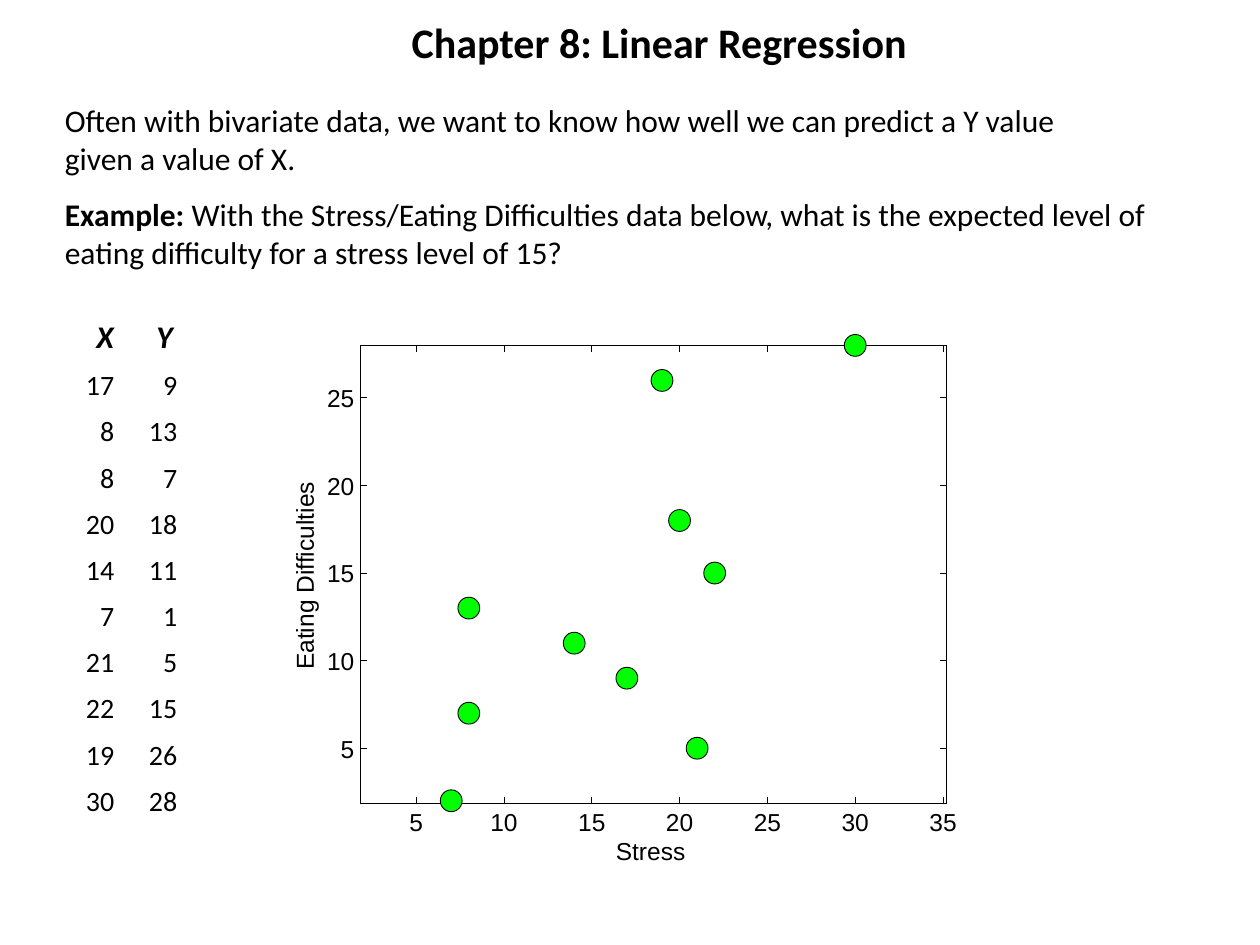
from dataclasses import dataclass

from lxml.etree import SubElement
from pptx import Presentation
from pptx.chart.data import XyChartData
from pptx.dml.color import RGBColor
from pptx.enum.chart import XL_CHART_TYPE, XL_MARKER_STYLE
from pptx.enum.shapes import MSO_CONNECTOR, MSO_SHAPE
from pptx.enum.text import MSO_ANCHOR, PP_ALIGN
from pptx.oxml import parse_xml
from pptx.oxml.ns import nsdecls, qn
from pptx.util import Inches, Pt

COLUMNS, ROWS = 120, 90
UNIT = Inches(10) / COLUMNS
NO_STYLE = "{2D5ABB26-0587-4C30-8999-92F81FD0307C}"

TABLE_DATA = [(17, 9), (8, 13), (8, 7), (20, 18), (14, 11),
              (7, 1), (21, 5), (22, 15), (19, 26), (30, 28)]
PLOTTED_DATA = [(7, 2) if pair == (7, 1) else pair for pair in TABLE_DATA]


@dataclass(frozen=True)
class Theme:
    ink: RGBColor = RGBColor(0, 0, 0)
    marker: RGBColor = RGBColor(0, 255, 0)
    text_font: str = "Calibri"
    plot_font: str = "Arial"
    title_size: int = 24
    body_size: int = 18
    table_size: int = 16
    plot_size: int = 14
    hairline: float = 0.5
    marker_size: int = 12


@dataclass(frozen=True)
class Box:
    left: float
    top: float
    width: float
    height: float

    @property
    def right(self):
        return self.left + self.width

    @property
    def bottom(self):
        return self.top + self.height

    def lengths(self):
        return [grid(value) for value in (self.left, self.top, self.width, self.height)]


@dataclass(frozen=True)
class Scale:
    low: float
    high: float
    ticks: range

    def share(self, value):
        return (value - self.low) / (self.high - self.low)


THEME = Theme()
X_SCALE = Scale(1.84, 35.2, range(5, 36, 5))
Y_SCALE = Scale(1.83, 28, range(5, 26, 5))


def grid(value):
    return round(value * UNIT)


def write(frame, *parts, size=THEME.body_size, font=THEME.text_font, bold=False,
          italic=False, align=PP_ALIGN.LEFT, anchor=MSO_ANCHOR.TOP, wrap=True,
          margins=None, tab=None):
    frame.word_wrap = wrap
    frame.vertical_anchor = anchor
    if margins is not None:
        frame.margin_left = frame.margin_right = margins
        frame.margin_top = frame.margin_bottom = margins
    paragraph = frame.paragraphs[0]
    paragraph.alignment = align
    if tab is not None:
        tabs = SubElement(paragraph._p.get_or_add_pPr(), qn("a:tabLst"))
        SubElement(tabs, qn("a:tab"), pos=str(grid(tab)), algn="l")
    for index, part in enumerate(parts):
        run = paragraph.add_run()
        run.text = part
        run.font.name = font
        run.font.size = Pt(size)
        run.font.bold = bold and index == 0
        run.font.italic = italic
        run.font.color.rgb = THEME.ink


def add_text(slide, box, *parts, **text_format):
    shape = slide.shapes.add_textbox(*box.lengths())
    write(shape.text_frame, *parts, **text_format)
    return shape


def add_plot_text(slide, box, text, **text_format):
    return add_text(slide, box, text, size=THEME.plot_size, font=THEME.plot_font,
                    wrap=False, margins=0, **text_format)


def add_line(slide, start_x, start_y, end_x, end_y):
    line = slide.shapes.add_connector(
        MSO_CONNECTOR.STRAIGHT, *map(grid, (start_x, start_y, end_x, end_y)))
    line.line.color.rgb = THEME.ink
    line.line.width = Pt(THEME.hairline)
    SubElement(line._element.spPr, qn("a:effectLst"))


def place_title(slide, box):
    title = slide.shapes.title
    title.left, title.top, title.width, title.height = box.lengths()
    write(title.text_frame, "Chapter 8: Linear Regression",
          size=THEME.title_size, bold=True, wrap=False)


def place_introduction(slide, box):
    half = box.height / 2
    add_text(slide, Box(box.left, box.top, 100, half),
             "Often with bivariate data, we want to know how well we can predict "
             "a Y value given a value of X.")
    add_text(slide, Box(box.left, box.top + half, box.width, half),
             "Example: ",
             "With the Stress/Eating Difficulties data below, what is the expected "
             "level of eating difficulty for a stress level of 15?", bold=True)


def place_data_table(slide, box):
    add_text(slide, Box(box.left + 3, box.top - 4.4, 10, 4.8), "X\tY",
             bold=True, italic=True, wrap=False, tab=5.7)
    table = slide.shapes.add_table(len(TABLE_DATA), 2, *box.lengths()).table
    table.first_row = table.horz_banding = False
    table._tbl.tblPr.find(qn("a:tableStyleId")).text = NO_STYLE
    for row, values in enumerate(TABLE_DATA):
        for column, value in enumerate(values):
            cell = table.cell(row, column)
            cell.fill.background()
            cell.vertical_anchor = MSO_ANCHOR.BOTTOM
            cell.margin_left = cell.margin_right = cell.margin_top = Inches(0.01)
            cell.margin_bottom = 0
            write(cell.text_frame, str(value), size=THEME.table_size,
                  align=PP_ALIGN.RIGHT, anchor=None)


def format_plot_area(chart, outer, plot):
    area = chart._chartSpace.chart.plotArea
    for layout in area.findall(qn("c:layout")):
        area.remove(layout)
    shares = {"x": (plot.left - outer.left) / outer.width,
              "y": (plot.top - outer.top) / outer.height,
              "w": plot.width / outer.width, "h": plot.height / outer.height}
    values = "".join(f'<c:{key} val="{share:.4f}"/>' for key, share in shares.items())
    area.insert(0, parse_xml(
        f'<c:layout {nsdecls("c")}><c:manualLayout><c:layoutTarget val="inner"/>'
        f'<c:xMode val="edge"/><c:yMode val="edge"/>{values}'
        '</c:manualLayout></c:layout>'))
    clear = (f'<c:spPr {nsdecls("c", "a")}><a:noFill/>'
             '<a:ln><a:noFill/></a:ln></c:spPr>')
    area.append(parse_xml(clear))
    chart._chartSpace.chart.addnext(parse_xml(clear))


def place_scatter(slide, plot):
    place_axes(slide, plot)
    margin = 3
    outer = Box(plot.left - margin, plot.top - margin,
                plot.width + 2 * margin, plot.height + 2 * margin)
    data = XyChartData()
    points = data.add_series("Eating Difficulties")
    for x, y in PLOTTED_DATA:
        points.add_data_point(x, y)
    chart = slide.shapes.add_chart(
        XL_CHART_TYPE.XY_SCATTER, *outer.lengths(), data).chart
    chart.has_legend = chart.has_title = False
    chart.font.name = THEME.plot_font
    chart.font.size = Pt(THEME.plot_size)
    chart.font.color.rgb = THEME.ink
    for axis, scale in ((chart.category_axis, X_SCALE), (chart.value_axis, Y_SCALE)):
        axis.minimum_scale, axis.maximum_scale = scale.low, scale.high
        axis.has_major_gridlines = False
        axis.visible = False
    chart.plots[0].vary_by_categories = False
    series = chart.plots[0].series[0]
    series.smooth = False
    series.format.line.fill.background()
    series.marker.style = XL_MARKER_STYLE.CIRCLE
    series.marker.size = THEME.marker_size
    series.marker.format.fill.solid()
    series.marker.format.fill.fore_color.rgb = THEME.marker
    series.marker.format.line.fill.background()
    format_plot_area(chart, outer, plot)
    place_outlines(slide, plot)


def place_outlines(slide, plot):
    size = 2.08
    for x, y in PLOTTED_DATA:
        center_x = plot.left + plot.width * X_SCALE.share(x)
        center_y = plot.bottom - plot.height * Y_SCALE.share(y)
        box = Box(center_x - size / 2, center_y - size / 2, size, size)
        outline = slide.shapes.add_shape(MSO_SHAPE.OVAL, *box.lengths())
        outline.shadow.inherit = False
        outline.fill.background()
        outline.line.color.rgb = THEME.ink
        outline.line.width = Pt(THEME.hairline)


def place_axes(slide, plot):
    tick = 0.65
    for value in X_SCALE.ticks:
        x = plot.left + plot.width * X_SCALE.share(value)
        add_line(slide, x, plot.bottom, x, plot.bottom - tick)
        add_line(slide, x, plot.top, x, plot.top + tick)
        add_plot_text(slide, Box(x - 2, plot.bottom + 0.35, 4, 3.2), str(value),
                      align=PP_ALIGN.CENTER)
    for value in Y_SCALE.ticks:
        y = plot.bottom - plot.height * Y_SCALE.share(value)
        add_line(slide, plot.left, y, plot.left + tick, y)
        add_line(slide, plot.right, y, plot.right - tick, y)
        add_plot_text(slide, Box(plot.left - 4.6, y - 1.4, 4, 3.2), str(value),
                      align=PP_ALIGN.RIGHT)
    for y in (plot.top, plot.bottom):
        add_line(slide, plot.left, y, plot.right, y)
    for x in (plot.left, plot.right):
        add_line(slide, x, plot.bottom, x, plot.top)
    add_plot_text(slide, Box(plot.left + 24.3, plot.bottom + 3.1, 8.3, 3.2), "Stress")
    caption = add_plot_text(slide, Box(plot.left - 15.4, plot.top + 19.1, 20.4, 3.2),
                            "Eating Difficulties")
    caption.rotation = 270


def main():
    presentation = Presentation()
    presentation.slide_width, presentation.slide_height = grid(COLUMNS), grid(ROWS)
    slide = presentation.slides.add_slide(presentation.slide_layouts.get_by_name("Title Only"))
    place_title(slide, Box(38, 1, 50, 6))
    place_introduction(slide, Box(5, 9, 109, 18))
    place_data_table(slide, Box(5, 34, 12, 44))
    place_scatter(slide, Box(34.35, 32.9, 55.8, 43.65))
    presentation.save("out.pptx")


if __name__ == "__main__":
    main()
